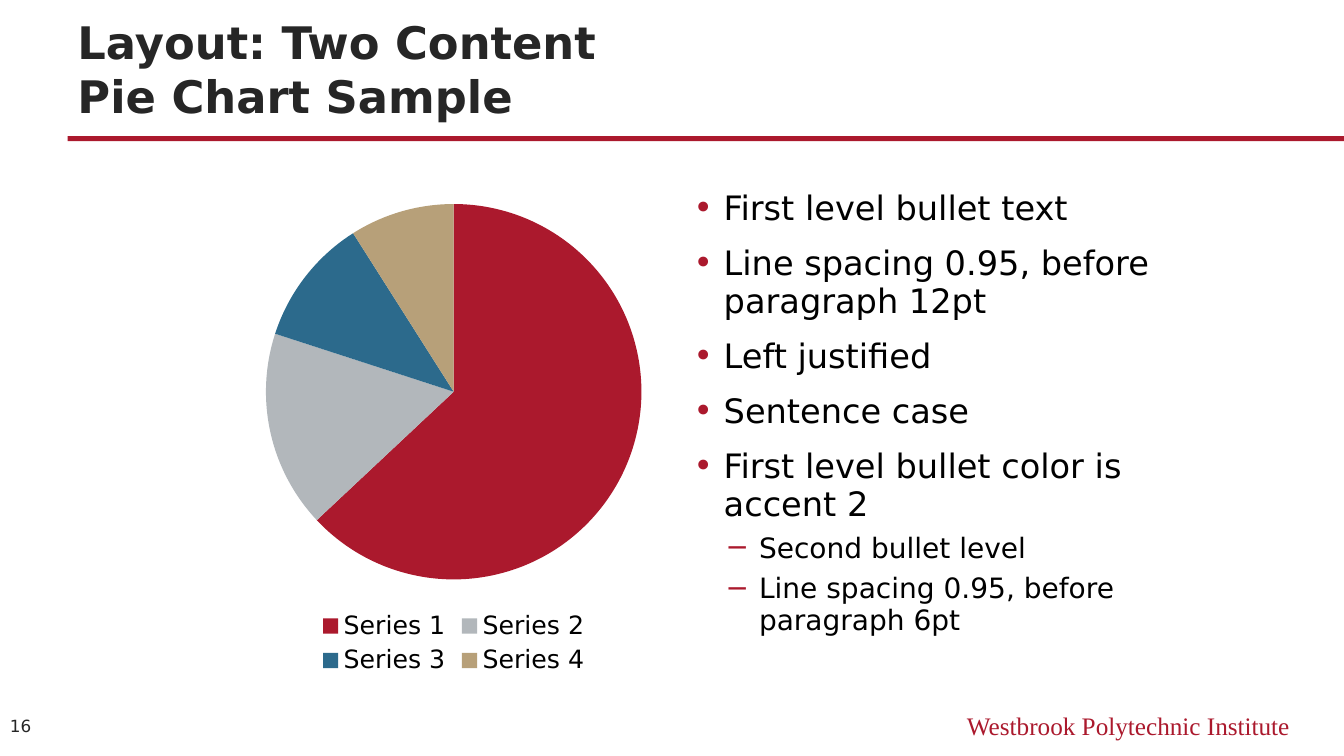
from pptx import Presentation
from pptx.chart.data import CategoryChartData
from pptx.dml.color import RGBColor
from pptx.enum.chart import XL_CHART_TYPE as CHART, XL_LEGEND_POSITION as LEGEND
from pptx.enum.shapes import MSO_SHAPE as SHAPE
from pptx.enum.text import MSO_ANCHOR as ANCHOR, PP_ALIGN as ALIGN
from pptx.oxml import parse_xml
from pptx.oxml.ns import nsdecls
from pptx.util import Inches, Pt

CRIMSON, GRAY, BLUE, TAN = "AB192D", "B2B7BB", "2C6A8C", "B7A079"
BLACK, CHARCOAL = "000000", "262626"
SANS, SERIF = "DejaVu Sans", "Times New Roman"

# Per level: bullet, left margin, text size, space before
LEVELS = [("•", 0.3, 24, 12), ("─", 0.65, 20, 6)]
BULLET_INDENT = 0.3

BULLETS = [
    (0, "First level bullet text"),
    (0, "Line spacing 0.95, before paragraph 12pt"),
    (0, "Left justified"),
    (0, "Sentence case"),
    (0, "First level bullet color is accent 2"),
    (1, "Second bullet level"),
    (1, "Line spacing 0.95, before paragraph 6pt"),
]
SHARES = [
    ("Series 1", 63, CRIMSON),
    ("Series 2", 17, GRAY),
    ("Series 3", 11, BLUE),
    ("Series 4", 9, TAN),
]


def rgb(value):
    return RGBColor.from_string(value)


def box(*lengths):
    return [Inches(n) for n in lengths]


class SlideBuilder:
    def __init__(self, slide):
        self.s = slide

    def style(self, font, size, color=BLACK, name=SANS, bold=False):
        for key, value in {"size": Pt(size), "name": name, "bold": bold}.items():
            setattr(font, key, value)
        font.color.rgb = rgb(color)

    def bar(self, at, color):
        sp = self.s.shapes.add_shape(SHAPE.RECTANGLE, *box(*at))
        sp.shadow.inherit = False
        sp.fill.solid()
        sp.fill.fore_color.rgb = rgb(color)
        sp.line.fill.background()

    def frame(self, at, anchor=ANCHOR.TOP):
        """Add an empty wrapping text box and return its text frame."""
        tf = self.s.shapes.add_textbox(*box(*at)).text_frame
        tf.word_wrap = True
        tf.vertical_anchor = anchor
        return tf

    def text(self, at, text, anchor=ANCHOR.TOP, align=ALIGN.LEFT, **fmt):
        p = self.frame(at, anchor).paragraphs[0]
        p.text = text
        p.alignment = align
        for r in p.runs:
            self.style(r.font, **fmt)

    def bullets(self, at, items):
        tf = self.frame(at)
        for i, (level, text) in enumerate(items):
            char, margin, size, before = LEVELS[level]
            p = tf.add_paragraph() if i else tf.paragraphs[0]
            fmt = {"level": level, "line_spacing": 0.95, "space_before": Pt(before)}
            for key, value in fmt.items():
                setattr(p, key, value)
            r = p.add_run()
            r.text = text
            self.style(r.font, size)
            self.mark(p, char, margin)

    def mark(self, p, char, margin):
        """Give a paragraph its hanging indent and coloured bullet."""
        ppr = p._p.get_or_add_pPr()
        ppr.set("marL", str(Inches(margin)))
        ppr.set("indent", str(-Inches(BULLET_INDENT)))
        ns = nsdecls("a")
        for xml in (
            f'<a:buClr {ns}><a:srgbClr val="{CRIMSON}"/></a:buClr>',
            f'<a:buFont {ns} typeface="{SANS}"/>',
            f'<a:buChar {ns} char="{char}"/>',
        ):
            ppr.append(parse_xml(xml))

    def pie(self, at, shares):
        names, values, colors = zip(*shares)
        data = CategoryChartData()
        data.categories = names
        data.add_series("Series 1", values)
        chart = self.s.shapes.add_chart(CHART.PIE, *box(*at), data).chart
        self.style(chart.font, 18)
        chart.has_title = False
        chart.has_legend = True
        chart.legend.position = LEGEND.BOTTOM
        chart.legend.include_in_layout = False
        plot = chart.plots[0]
        plot.vary_by_categories = True
        for i, color in enumerate(colors):
            part = plot.series[0].points[i].format
            part.fill.solid()
            part.fill.fore_color.rgb = rgb(color)
            part.line.fill.background()


def main():
    prs = Presentation()
    prs.slide_width, prs.slide_height = box(13.33, 7.5)
    s = SlideBuilder(prs.slides.add_slide(prs.slide_layouts[6]))

    s.bar((0.67, 1.35, 12.66, 0.05), CRIMSON)
    s.text((8, 7, 4.89, 0.4), "Westbrook Polytechnic Institute",
           align=ALIGN.RIGHT, size=18, color=CRIMSON, name=SERIF)
    s.text((0.67, 0.38, 12, 0.88), "Layout: Two Content\vPie Chart Sample",
           ANCHOR.BOTTOM, size=32, color=CHARCOAL, bold=True)
    s.pie((2.5, 1.83, 4, 4.92), SHARES)
    s.bullets((6.78, 1.83, 5.33, 4.92), BULLETS)
    s.text((0, 6.99, 0.67, 0.43), "16", ANCHOR.MIDDLE, size=12, color=CHARCOAL)

    prs.save("out.pptx")


if __name__ == "__main__":
    main()
